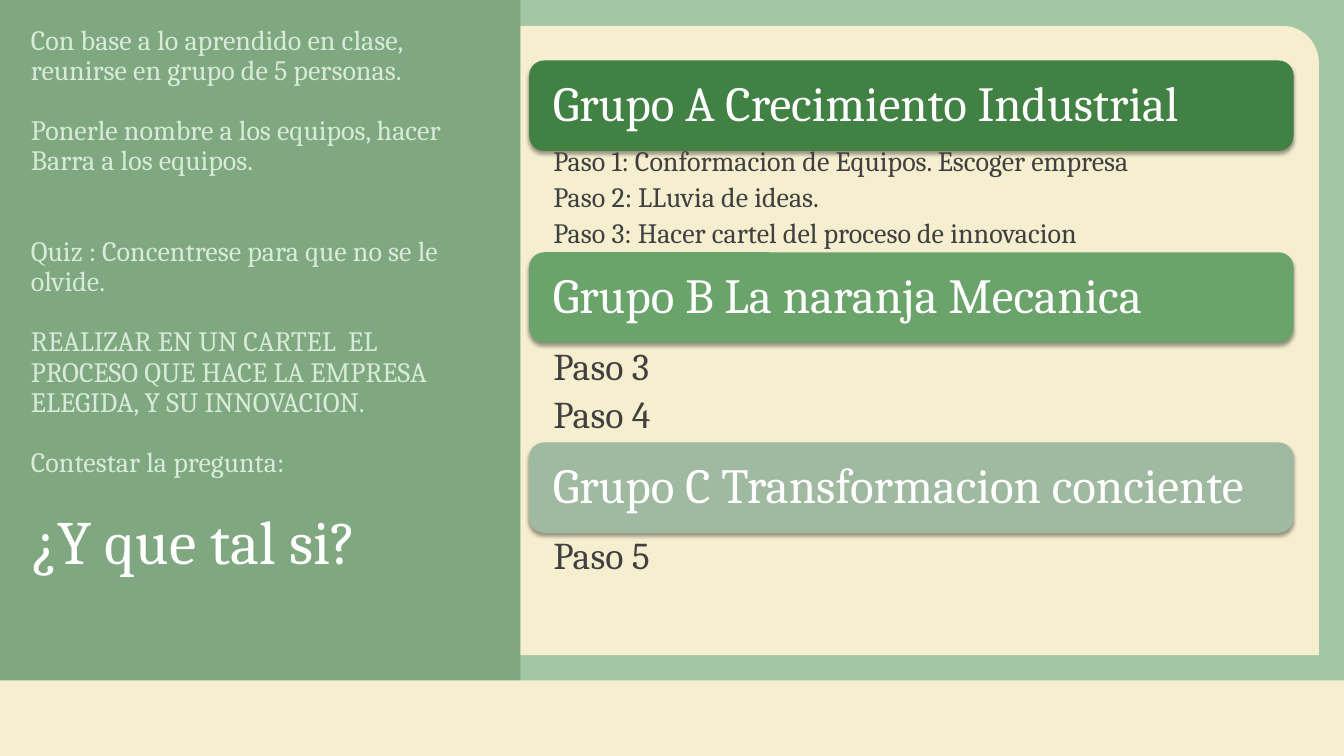
from lxml import etree
from pptx import Presentation
from pptx.dml.color import RGBColor
from pptx.enum.shapes import MSO_SHAPE
from pptx.enum.text import MSO_ANCHOR, MSO_AUTO_SIZE, PP_ALIGN
from pptx.oxml import parse_xml
from pptx.oxml.ns import qn
from pptx.util import Pt

RECT = MSO_SHAPE.RECTANGLE
CORNER = MSO_SHAPE.ROUND_1_RECTANGLE
ROUND = MSO_SHAPE.ROUNDED_RECTANGLE
TOP, MID, LOW = MSO_ANCHOR.TOP, MSO_ANCHOR.MIDDLE, MSO_ANCHOR.BOTTOM
LEFT = PP_ALIGN.LEFT
FIXED = MSO_AUTO_SIZE.NONE

CREAM, WHITE, MINT, GREY = "F5EECF", "FFFFFF", "D8EBD8", "404040"
SHADOW = (
    '<a:effectLst xmlns:a="http://schemas.openxmlformats.org/drawingml/2006/main">'
    '<a:outerShdw blurRad="39370" dist="22860" dir="5400000" rotWithShape="0">'
    '<a:srgbClr val="000000"><a:alpha val="40000"/></a:srgbClr>'
    '</a:outerShdw></a:effectLst>'
)

deck = Presentation()
deck.slide_width, deck.slide_height = Pt(960), Pt(540)
slide = deck.slides.add_slide(deck.slide_layouts[5])
shapes = slide.shapes


def block(kind, box, color, alpha=100):
    """Add a filled shape without line or shadow; alpha is its opacity in percent."""
    item = shapes.add_shape(kind, *map(Pt, box))
    item.shadow.inherit = False
    item.line.fill.background()
    item.fill.solid()
    item.fill.fore_color.rgb = RGBColor.from_string(color)
    if alpha < 100:
        tone = item.fill._xPr.find(qn("a:solidFill"))[0]
        etree.SubElement(tone, qn("a:alpha"), val=str(alpha * 1000))
    return item


def write(item, lines, size, color, anchor=TOP, pad=(7.2, 3.6), after=0):
    """Fill a shape with (text, space before) lines; pad is side and top inset."""
    frame = item.text_frame
    look = dict(word_wrap=True, auto_size=FIXED, vertical_anchor=anchor,
                margin_left=Pt(pad[0]), margin_right=Pt(7.2),
                margin_top=Pt(pad[1]), margin_bottom=Pt(pad[1]))
    for key, value in look.items():
        setattr(frame, key, value)
    for i, (text, gap) in enumerate(lines):
        para = frame.add_paragraph() if i else frame.paragraphs[0]
        style = dict(alignment=LEFT, line_spacing=0.9,
                     space_before=Pt(gap), space_after=Pt(after))
        for key, value in style.items():
            setattr(para, key, value)
        run = para.add_run()
        run.text = text
        run.font.name, run.font.size = "Cambria", Pt(size)
        run.font.color.rgb = RGBColor.from_string(color)


# Backdrop
block(RECT, (0, 486, 960, 54), CREAM)
block(RECT, (0, 0, 960, 486), "488E4A", 50)
panel = block(CORNER, (371.7, 18.4, 570.3, 449.5), CREAM)
panel.adjustments[0] = 0.058
block(RECT, (0, 0, 371.7, 486), "366A38", 32)

# Title, raised above the backdrop
title = shapes.title
title._element.getparent().append(title._element)
frame = dict(left=15, top=352.8, width=307.5, height=63.4)
for key, value in frame.items():
    setattr(title, key, Pt(value))
write(title, [("¿Y que tal si?", 0)], 44, WHITE, LOW)

# Instructions
ROW = 21.5
tasks = [
    ("Con base a lo aprendido en clase, reunirse en grupo de 5 personas.", 0),
    ("Ponerle nombre a los equipos, hacer Barra a los equipos.", ROW),
    ("Quiz : Concentrese para que no se le olvide.", 2 * ROW),
    ("REALIZAR EN UN CARTEL  EL PROCESO QUE HACE LA EMPRESA ELEGIDA, "
     "Y SU INNOVACION.", ROW),
    ("Contestar la pregunta:", ROW),
]
body = shapes.add_textbox(Pt(15), Pt(15), Pt(323.3), Pt(453))
write(body, tasks, 20, MINT)

# Groups: name, colour, band top, steps top, steps height, size, steps
X, WIDE, BAND = 378, 546, 64.6
groups = [
    ("Grupo A Crecimiento Industrial", "418143", 43.2, 103, 77, 20,
     ["Paso 1: Conformacion de Equipos. Escoger empresa",
      "Paso 2: LLuvia de ideas.",
      "Paso 3: Hacer cartel del proceso de innovacion"]),
    ("Grupo B La naranja Mecanica", "6AA46B", 180.2, 244.8, 71.2, 27,
     ["Paso 3", "Paso 4"]),
    ("Grupo C Transformacion conciente", "A0BAA1", 316, 380.4, 45.4, 27,
     ["Paso 5"]),
]
for name, color, top, low, high, size, steps in groups:
    band = block(ROUND, (X, top, WIDE, BAND), color)
    props = band._element.spPr
    props.replace(props.find(qn("a:effectLst")), parse_xml(SHADOW))
    write(band, [(name, 0)], 35, WHITE, MID, (13.8, 7.2))
    note = shapes.add_textbox(Pt(X), Pt(low), Pt(WIDE), Pt(high))
    write(note, [(step, 0) for step in steps], size, GREY,
          pad=(17.3, size / 8), after=size / 5)

deck.save("out.pptx")
